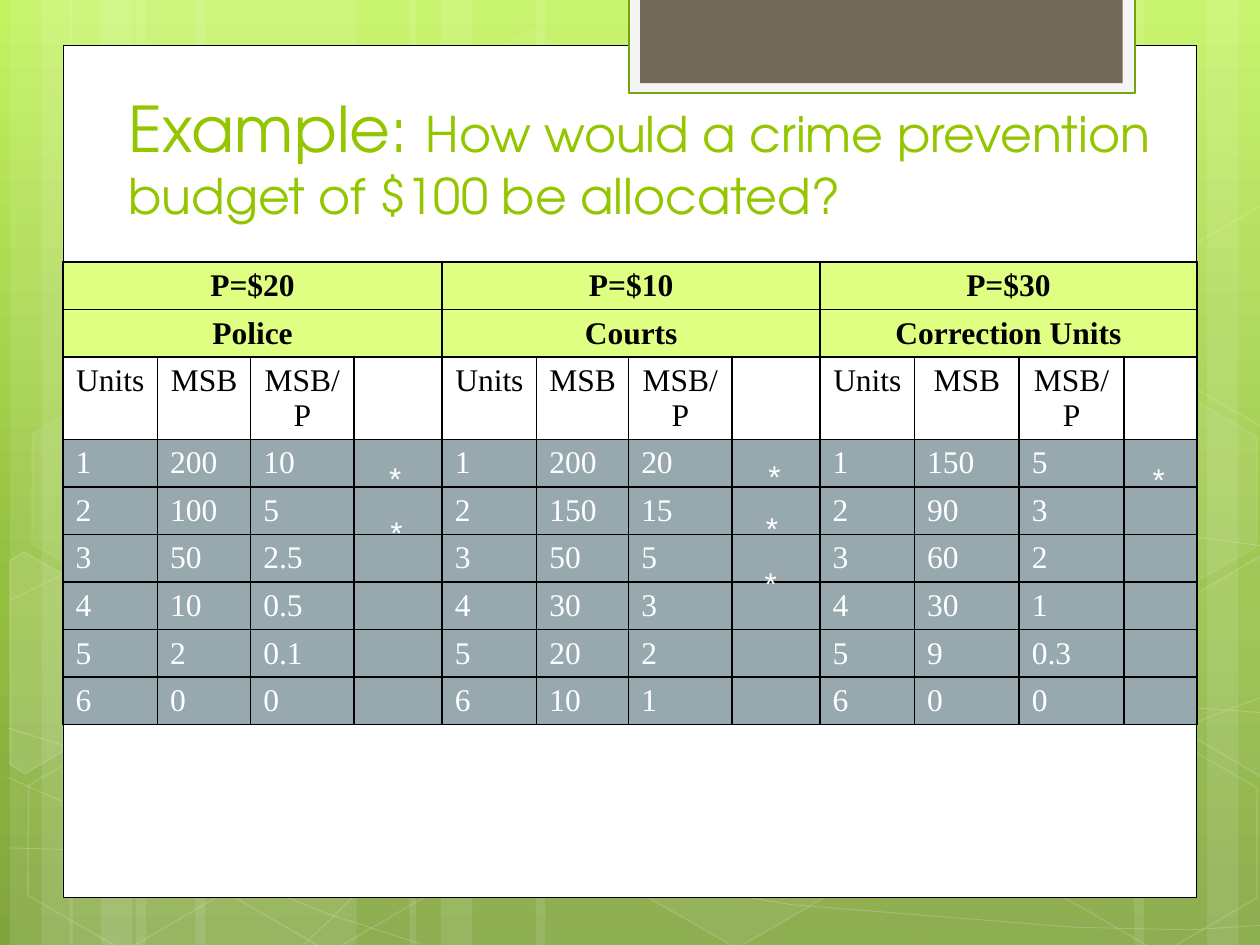
from copy import deepcopy
from dataclasses import dataclass
from lxml import etree
import pptx
import pptx.dml.color
import pptx.enum.shapes
import pptx.enum.text
import pptx.oxml
import pptx.oxml.ns
import pptx.util
from pptx.util import Inches

qn = pptx.oxml.ns.qn
SHAPE = pptx.enum.shapes.MSO_SHAPE
ALIGN = pptx.enum.text.PP_ALIGN

@dataclass(frozen=True)
class Theme:
    white: str = "FFFFFF"
    black: str = "000000"
    title: str = "94C600"
    tab_frame: str = "F5F5F5"
    tab_line: str = "74A510"
    tab: str = "71685A"
    heading: str = "DFFF82"
    body: str = "97A9AF"
    sky: tuple = ((0, "C3F35F"), (0.62, "93BF3F"), (1, "81A53E"))
    title_font: str = "TeX Gyre Adventor"
    table_font: str = "Times New Roman"
    mark_font: str = "Arial"
    title_size: int = 36
    subtitle_size: int = 28
    text_size: int = 18

THEME = Theme()

# Backdrop: left and width of stripes; hexagons as left, top, fill %, line %
STRIPES = [(1.08, 1.75), (0.08, 0.5), (0.33, 0.83), (1.55, 1.75), (0.55, 0.5), (0.8, 0.83),
           (7.33, 1.75), (9.58, 0.5), (9, 0.83), (4.25, 3.08), (3.25, 0.5), (3.5, 0.83)]
HEXAGONS = [(3.34, 0.36, 4, 8), (4.97, 5.89, 6, 12), (0.11, 5.91, 0, 12), (0.14, 3.12, 7, 8),
            (1.74, 5.92, 0, 12), (7.53, 4.53, 10, 12), (8.34, 5.93, 0, 12), (8.34, 3.14, 7, 8)]
CUT_HEXAGONS = [
    ([(0.08, 4.45), (0.19, 4.38), (0.96, 4.82), (0.95, 5.7), (0.2, 6.14), (0.08, 6.07)], 10),
    ([(9.26, 4.85), (10.01, 4.41), (10.09, 4.46), (10.09, 6.13), (10.02, 6.17), (9.26, 5.73)], 4),
    ([(9.26, 2.07), (10.01, 1.63), (10.1, 1.68), (10.09, 3.35), (10.02, 3.39), (9.26, 2.95)], 0),
]
WAVES = [
    [(0.07, 6.73), (1.9, 6.78), (4.58, 6.65), (7.92, 6.17), (9.24, 5.83), (10.07, 5.51)],
    [(0.07, 4.77), (0.55, 4.53), (1.21, 4.31), (3.47, 3.87), (6.54, 3.87), (10.07, 4.34)],
    [(0.06, 6.17), (1.83, 6.94), (2.62, 7.26), (3.34, 7.49)],
    [(0.07, 5.78), (1.28, 6.16), (3.57, 6.73), (6.28, 7.18), (8.53, 7.36), (9.45, 7.38), (10.07, 7.34)],
    [(2.42, 7.49), (3.02, 6.91), (3.88, 6.39), (4.7, 6.09), (6.08, 5.78), (7.94, 5.62), (9.53, 5.62), (10.06, 5.66)],
]

# Table: price, service and the MSB and MSB/P of each unit
SERVICES = [
    ("P=$20", "Police", [("200", "10"), ("100", "5"), ("50", "2.5"), ("10", "0.5"), ("2", "0.1"), ("0", "0")]),
    ("P=$10", "Courts", [("200", "20"), ("150", "15"), ("50", "5"), ("30", "3"), ("20", "2"), ("10", "1")]),
    ("P=$30", "Correction Units", [("150", "5"), ("90", "3"), ("60", "2"), ("30", "1"), ("9", "0.3"), ("0", "0")]),
]
COLUMN_WIDTHS = [0.75, 0.74, 0.82, 0.7, 0.75, 0.73, 0.82, 0.7, 0.75, 0.83, 0.83, 0.58]
ROW_HEIGHTS = [0.37, 0.37, 0.65] + [0.37] * 6
CHOSEN_MARKS = [(2.99, 3.59), (3, 4.02), (6, 3.58), (5.98, 3.99), (5.97, 4.43), (9.05, 3.6)]

def rgb(color):
    return pptx.dml.color.RGBColor.from_string(color)

def set_font(font, name, size, color, bold=False):
    font.name, font.size, font.bold = name, pptx.util.Pt(size), bold
    font.color.rgb = rgb(color)

def paint(shape, fill=None, fill_opacity=100, line=None, line_width=1, line_opacity=100):
    shape.shadow.inherit = False
    shape.line.width = pptx.util.Pt(line_width)
    for area, holder, color, opacity in ((shape.fill, "a:solidFill", fill, fill_opacity),
                                         (shape.line.fill, "a:ln/a:solidFill", line, line_opacity)):
        if not color or not opacity:
            area.background()
            continue
        area.solid()
        area.fore_color.rgb = rgb(color)
        if opacity < 100:
            solid_color = shape.element.spPr.xpath(f"{holder}/a:srgbClr")[0]
            etree.SubElement(solid_color, qn("a:alpha")).set("val", str(opacity * 1000))

def add_block(slide, left, top, width, height, kind=SHAPE.RECTANGLE, **style):
    block = slide.shapes.add_shape(kind, Inches(left), Inches(top), Inches(width), Inches(height))
    paint(block, **style)
    return block

def add_outline(slide, points, close, **style):
    corners = [(Inches(x), Inches(y)) for x, y in points]
    builder = slide.shapes.build_freeform(*corners[0])
    builder.add_line_segments(corners[1:], close=close)
    paint(builder.convert_to_shape(), **style)

def add_backdrop(slide):
    sky = slide.background.fill
    sky.gradient()
    sky.gradient_angle = 270
    stops = slide.element.find(f".//{qn('a:gsLst')}")
    stops.append(deepcopy(stops[-1]))
    for stop, (position, color) in zip(sky.gradient_stops, THEME.sky):
        stop.position = position
        stop.color.rgb = rgb(color)
    for left, width in STRIPES:
        add_block(slide, left, 0, width, 7.5, fill=THEME.white, fill_opacity=10)
    for wave in WAVES:
        add_outline(slide, wave, False, line=THEME.white, line_width=0.5, line_opacity=20)
    for left, top, fill_opacity, line_opacity in HEXAGONS:
        hexagon = add_block(slide, left, top, 1.75, 1.52, SHAPE.HEXAGON, fill=THEME.white,
                            fill_opacity=fill_opacity, line=THEME.white, line_opacity=line_opacity)
        hexagon.adjustments[0] = 0.285
        hexagon.rotation = 30
    for corners, opacity in CUT_HEXAGONS:
        add_outline(slide, corners, True, fill=THEME.white, fill_opacity=opacity, line=THEME.white, line_opacity=12)

    # White page and the tab at its top
    add_block(slide, 0.5, 0.36, 9, 6.76, fill=THEME.white, line=THEME.black, line_width=0.5)
    add_block(slide, 4.99, -0.02, 4.02, 0.76, fill=THEME.tab_frame, line=THEME.tab_line, line_width=1.25)
    add_block(slide, 5.08, -0.02, 3.83, 0.68, fill=THEME.tab)

def add_title(slide):
    title = slide.shapes.title
    title.element.getparent().append(title.element)  # in front of the page
    title.left, title.top, title.width, title.height = map(Inches, (0.92, 0.5, 8.75, 1.33))
    title.text_frame.auto_size = pptx.enum.text.MSO_AUTO_SIZE.NONE
    title.text_frame.vertical_anchor = pptx.enum.text.MSO_ANCHOR.BOTTOM
    heading = title.text_frame.paragraphs[0]
    heading.alignment = ALIGN.LEFT
    for words, size in (("Example: ", THEME.title_size),
                        ("How would a crime prevention budget of $100 be allocated?", THEME.subtitle_size)):
        run = heading.add_run()
        run.text = words
        set_font(run.font, THEME.title_font, size, THEME.title)

def fill_cell(cell, text, fill, color, align, bold=False):
    cell.fill.solid()
    cell.fill.fore_color.rgb = rgb(fill)
    paragraph = cell.text_frame.paragraphs[0]
    paragraph.text = text
    paragraph.alignment = align
    for run in paragraph.runs:
        set_font(run.font, THEME.table_font, THEME.text_size, color, bold)
    if not text:  # an empty cell keeps the line height of the others
        end = etree.SubElement(paragraph._p, qn("a:endParaRPr"), sz=str(THEME.text_size * 100))
        etree.SubElement(end, qn("a:latin"), typeface=THEME.table_font)
    properties = cell._tc.get_or_add_tcPr()
    for position, side in enumerate(("lnL", "lnR", "lnT", "lnB")):
        properties.insert(position, pptx.oxml.parse_xml(
            f'<a:{side} {pptx.oxml.ns.nsdecls("a")} w="12700"><a:solidFill>'
            f'<a:srgbClr val="{THEME.black}"/></a:solidFill></a:{side}>'))

def add_budget_table(slide):
    table = slide.shapes.add_table(len(ROW_HEIGHTS), len(COLUMN_WIDTHS), Inches(0.5), Inches(2.08),
                                   Inches(sum(COLUMN_WIDTHS)), Inches(sum(ROW_HEIGHTS))).table
    table.first_row = table.horz_banding = False
    for column, width in zip(table.columns, COLUMN_WIDTHS):
        column.width = Inches(width)
    for row, height in zip(table.rows, ROW_HEIGHTS):
        row.height = Inches(height)
    for group, (price, service, benefits) in enumerate(SERVICES):
        first = group * 4
        for row, heading in enumerate((price, service)):
            for offset, text in enumerate((heading, "", "", "")):
                fill_cell(table.cell(row, first + offset), text, THEME.heading, THEME.black, ALIGN.CENTER, True)
            table.cell(row, first).merge(table.cell(row, first + 3))
        for offset, label in enumerate(("Units", "MSB", "MSB/P", "")):
            fill_cell(table.cell(2, first + offset), label, THEME.white, THEME.black, ALIGN.CENTER)
        for unit, values in enumerate(benefits, 1):
            for offset, text in enumerate((str(unit), *values, "")):
                fill_cell(table.cell(unit + 2, first + offset), text, THEME.body, THEME.white, ALIGN.LEFT)

def add_chosen_mark(slide, left, top):
    mark = slide.shapes.add_textbox(Inches(left), Inches(top), Inches(0.3), Inches(0.4))
    mark.text_frame.word_wrap = False
    mark.text_frame.text = "*"
    set_font(mark.text_frame.paragraphs[0].runs[0].font, THEME.mark_font, THEME.text_size, THEME.white)

def main():
    deck = pptx.Presentation()
    deck.slide_width, deck.slide_height = Inches(10), Inches(7.5)
    slide = deck.slides.add_slide(deck.slide_layouts[5])
    add_backdrop(slide)
    add_title(slide)
    add_budget_table(slide)
    for left, top in CHOSEN_MARKS:
        add_chosen_mark(slide, left, top)
    deck.save("out.pptx")

if __name__ == "__main__":
    main()
